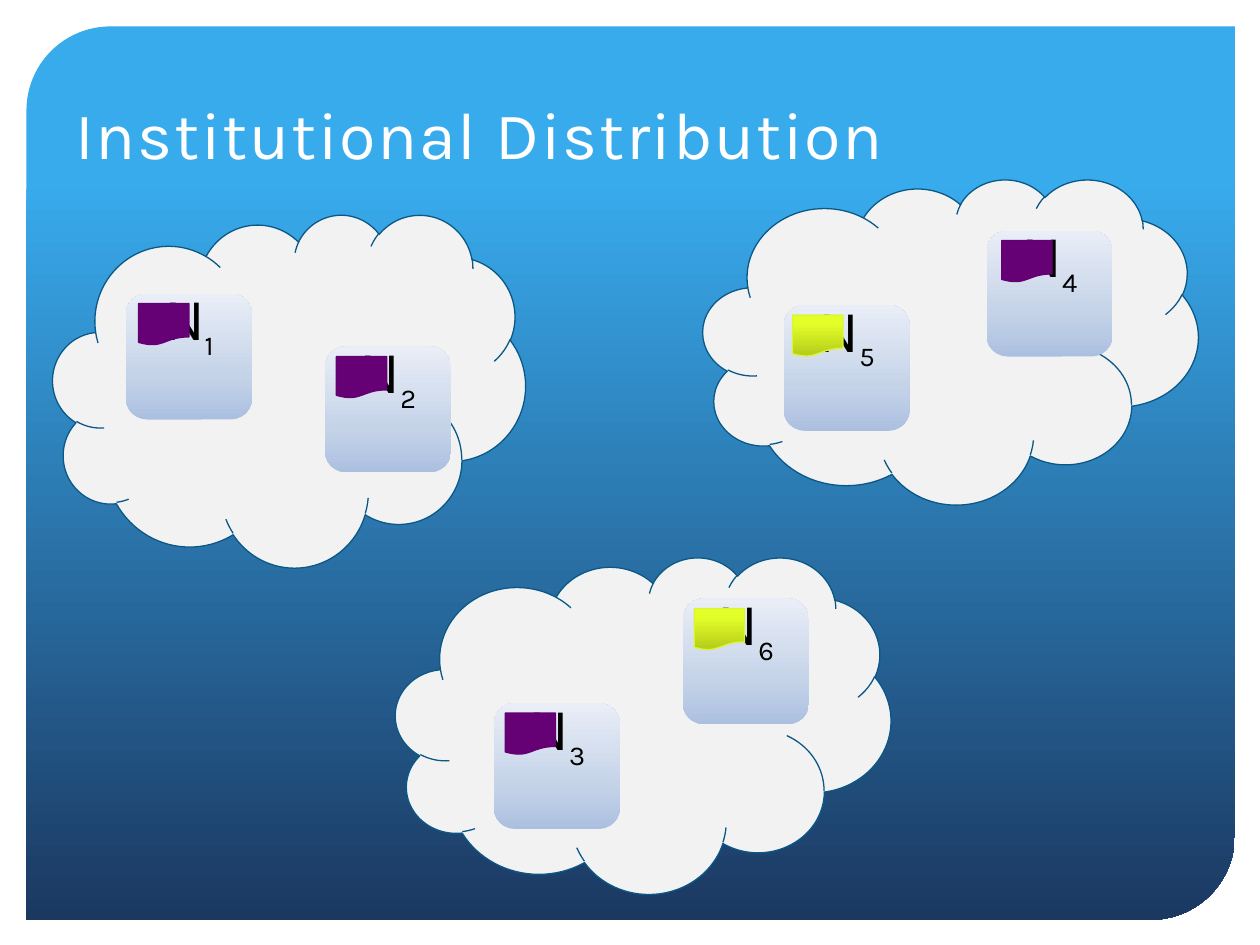
"""Build the Institutional Distribution slide: nodes holding documents inside three clouds."""
from dataclasses import dataclass

from lxml.etree import SubElement
from pptx import Presentation
from pptx.dml.color import RGBColor
from pptx.enum.shapes import MSO_SHAPE as Preset
from pptx.enum.text import MSO_ANCHOR as Anchor, PP_ALIGN as Align
from pptx.oxml.ns import qn
from pptx.shapes.autoshape import Shape
from pptx.slide import Slide
from pptx.util import Inches, Pt

FONT = "Karla"
COLORS = {
    "white": "FFFFFF", "black": "000000",
    "panel_top": "38ABED", "panel_bottom": "1B3861",
    "cloud": "F2F2F2", "cloud_line": "095886",
    "node_low": "ABC0E0", "node_middle": "C5D3E8", "node_high": "E9EEF7",
    "purple": "660075", "purple_line": "640072",
    "lime_low": "B4CB19", "lime_middle": "E3FF29", "lime_high": "E3FF2B",
    "lime_line": "DBF437",
}
PANEL_STOPS = [(17, "panel_top"), (100, "panel_bottom")]
NODE_STOPS = [(0, "node_low"), (35, "node_middle"), (100, "node_high")]
LIME_STOPS = [(0, "lime_low"), (80, "lime_middle"), (100, "lime_high")]


@dataclass
class Box:
    left: float
    top: float
    width: float
    height: float


@dataclass
class Node:
    number: int
    left: float
    top: float
    document_left: float
    lime: bool = False


CLOUDS = [
    Box(3.14, 4.42, 3.93, 2.67),
    Box(5.58, 1.42, 3.93, 2.58),
    Box(0.42, 1.7, 3.75, 2.8),
]
NODES = [
    Node(1, 1, 2.33, 1.1),
    Node(2, 2.58, 2.75, 2.67),
    Node(3, 3.92, 5.58, 4.01),
    Node(4, 7.83, 1.83, 7.95),
    Node(5, 6.22, 2.42, 6.29, lime=True),
    Node(6, 5.42, 4.75, 5.51, lime=True),
]


def rgb(name: str) -> RGBColor:
    """Return a named colour."""
    return RGBColor.from_string(COLORS[name])


def place(shape: Shape, box: Box) -> None:
    """Move and size a shape."""
    shape.left, shape.top = Inches(box.left), Inches(box.top)
    shape.width, shape.height = Inches(box.width), Inches(box.height)


def fill_gradient(shape: Shape, stops: list[tuple[int, str]], angle: int) -> None:
    """Fill a shape with a linear gradient; the angle runs clockwise in degrees."""
    shape.fill.gradient()
    gradient = shape._element.spPr.find(qn("a:gradFill"))
    stop_list = gradient.find(qn("a:gsLst"))
    for stop in list(stop_list):
        stop_list.remove(stop)
    for percent, color in stops:
        stop = SubElement(stop_list, qn("a:gs"), pos=str(percent * 1000))
        SubElement(stop, qn("a:srgbClr"), val=COLORS[color])
    gradient.find(qn("a:lin")).set("ang", str(angle * 60000))


def add_preset(slide: Slide, preset: Preset, box: Box, line: str | None = None) -> Shape:
    """Add a shadowless preset shape with an optional outline."""
    shape = slide.shapes.add_shape(preset, 0, 0, 0, 0)
    place(shape, box)
    shape.shadow.inherit = False
    if line:
        shape.line.color.rgb = rgb(line)
        shape.line.width = Pt(0.75)
    else:
        shape.line.fill.background()
    return shape


def add_solid(slide: Slide, preset: Preset, box: Box, color: str, line: str) -> None:
    """Add an outlined shape of one colour."""
    shape = add_preset(slide, preset, box, line)
    shape.fill.solid()
    shape.fill.fore_color.rgb = rgb(color)


def add_panel(slide: Slide) -> None:
    """Add the rounded gradient panel behind everything."""
    panel = add_preset(slide, Preset.ROUND_2_DIAG_RECTANGLE, Box(0.21, 0.21, 9.59, 7.09))
    panel.adjustments[0], panel.adjustments[1] = 0.094, 0
    fill_gradient(panel, PANEL_STOPS, 90)


def add_title(slide: Slide, text: str) -> None:
    """Write the title and bring it in front of the panel and clouds."""
    title = slide.shapes.title
    place(title, Box(0.5, 0.17, 9, 1.25))
    slide.shapes._spTree.append(title._element)
    title.text_frame.text = text
    title.text_frame.vertical_anchor = Anchor.BOTTOM
    paragraph = title.text_frame.paragraphs[0]
    paragraph.alignment = Align.LEFT
    paragraph.font.name, paragraph.font.size = FONT, Pt(38)
    paragraph.font.color.rgb = rgb("white")
    paragraph.runs[0].font._element.set("spc", "100")


def add_node(slide: Slide, node: Node) -> None:
    """Add a rounded node whose label sits in its upper half."""
    shape = add_preset(slide, Preset.ROUNDED_RECTANGLE, Box(node.left, node.top, 1, 1))
    fill_gradient(shape, NODE_STOPS, 270)
    frame = shape.text_frame
    frame.vertical_anchor = Anchor.MIDDLE
    frame.margin_top, frame.margin_bottom = 0, Inches(0.55)
    paragraph = frame.paragraphs[0]
    paragraph.alignment = Align.CENTER
    paragraph.font.name, paragraph.font.size = FONT, Pt(34)
    paragraph.font.color.rgb = rgb("black")
    paragraph.add_run().text = "N"
    subscript = paragraph.add_run()
    subscript.text = str(node.number)
    subscript.font._element.set("baseline", "-25000")
    subscript.font._element.set("cap", "small")


def add_document(slide: Slide, node: Node) -> None:
    """Add the document held by a node."""
    box = Box(node.document_left, node.top + 0.08, 0.4, 0.33)
    if node.lime:
        document = add_preset(slide, Preset.FLOWCHART_DOCUMENT, box, "lime_line")
        fill_gradient(document, LIME_STOPS, 270)
    else:
        add_solid(slide, Preset.FLOWCHART_DOCUMENT, box, "purple", "purple_line")


def main() -> None:
    """Build and save the presentation."""
    presentation = Presentation()
    presentation.slide_width, presentation.slide_height = Inches(10), Inches(7.5)
    slide = presentation.slides.add_slide(presentation.slide_layouts[5])
    add_panel(slide)
    for cloud in CLOUDS:
        add_solid(slide, Preset.CLOUD, cloud, "cloud", "cloud_line")
    add_title(slide, "Institutional Distribution")
    for node in NODES:
        add_node(slide, node)
    for node in NODES:
        add_document(slide, node)
    presentation.save("out.pptx")


if __name__ == "__main__":
    main()
